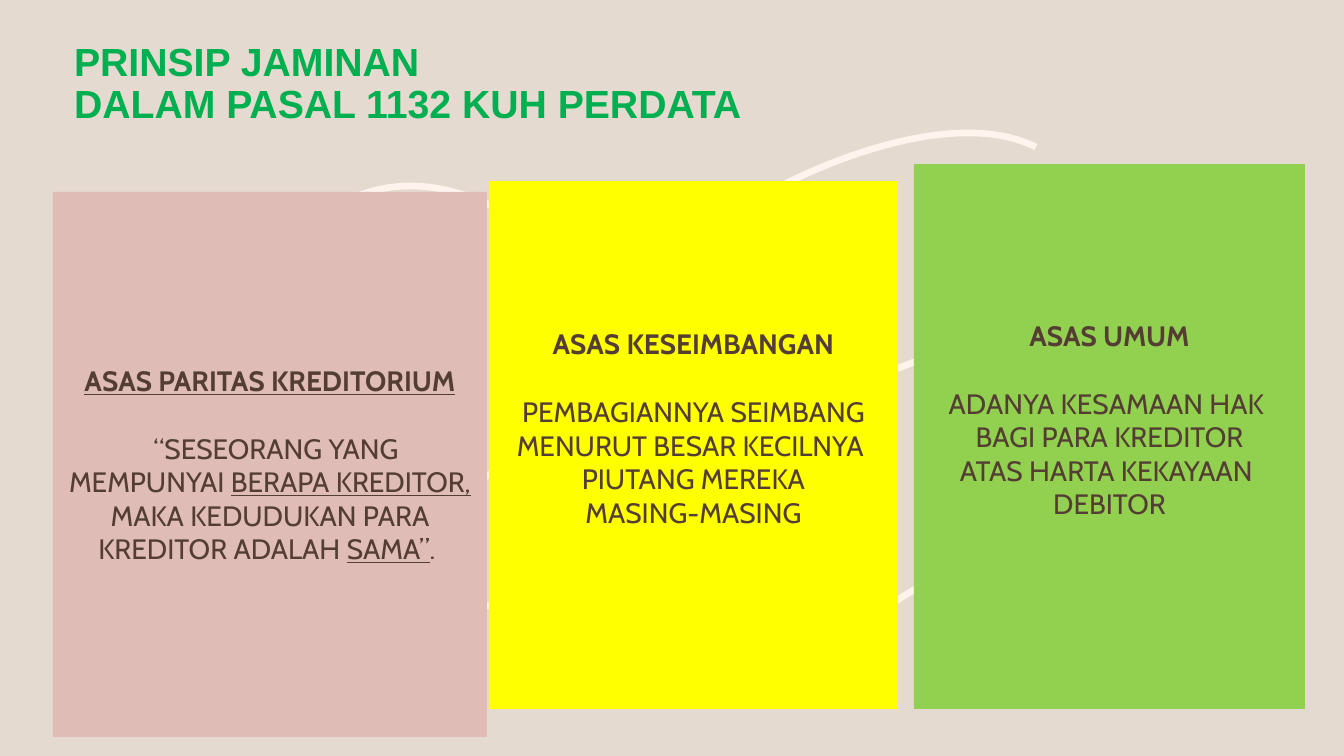
from dataclasses import dataclass

import lxml.etree
import pptx
import pptx.dml.color
import pptx.enum.shapes
import pptx.enum.text
import pptx.oxml.ns
import pptx.util

PX_PER_INCH = 100.8

Point = tuple[int, int]


@dataclass(frozen=True)
class Theme:
    background: str = "E5DACF"
    curve: str = "FEF3ED"
    title: str = "00B050"
    body: str = "543E34"
    pink: str = "DFBDB6"
    yellow: str = "FFFF00"
    green: str = "92D050"
    title_font: str = "Arial"
    body_font: str = "Cabin"
    title_size: float = 28
    body_size: float = 20
    body_line: float = 24.3
    curve_width: float = 4.75


@dataclass(frozen=True)
class Box:
    left: int
    top: int
    width: int
    height: int


@dataclass(frozen=True)
class Span:
    text: str
    underline: bool = False


@dataclass(frozen=True)
class Card:
    box: Box
    fill: str
    heading: Span
    lines: list[list[Span]]
    bottom_inset: int = 39
    indent: int = 0


THEME = Theme()
TITLE = "PRINSIP JAMINAN\vDALAM PASAL 1132 KUH PERDATA"
TITLE_BOX = Box(64, 17, 1008, 135)

CURVES: list[list[Point]] = [
    [(840, 386), (920, 366), (993, 330), (1055, 277)],
    [(589, 431), (513, 456), (449, 494), (392, 543)],
    [(310, 225), (354, 188), (402, 178), (454, 192),
     (471, 196), (486, 203), (502, 211),
     (535, 226), (571, 237), (610, 238),
     (643, 238), (676, 231), (708, 219),
     (744, 205), (764, 195), (785, 184),
     (808, 172), (949, 104), (1036, 147)],
    [(927, 584), (911, 590), (898, 600), (884, 610),
     (854, 630), (822, 646), (784, 652),
     (752, 658), (720, 656), (686, 649),
     (650, 642), (629, 634), (607, 627),
     (583, 620), (437, 575), (350, 641)],
]

CARDS = [
    Card(Box(53, 192, 434, 545), THEME.pink,
         Span("ASAS PARITAS KREDITORIUM", True),
         [[Span("“SESEORANG YANG MEMPUNYAI "),
           Span("BERAPA KREDITOR,", True),
           Span(" MAKA KEDUDUKAN PARA KREDITOR ADALAH "),
           Span("SAMA”", True),
           Span(". ")]], bottom_inset=5, indent=12),
    Card(Box(489, 181, 409, 528), THEME.yellow,
         Span("ASAS KESEIMBANGAN"),
         [[Span("PEMBAGIANNYA SEIMBANG MENURUT BESAR KECILNYA ")],
          [Span("PIUTANG MEREKA")],
          [Span("MASING-MASING")]]),
    Card(Box(914, 164, 391, 545), THEME.green,
         Span("ASAS UMUM"),
         [[Span("ADANYA KESAMAAN HAK ")],
          [Span("BAGI PARA KREDITOR")],
          [Span("ATAS HARTA KEKAYAAN ")],
          [Span("DEBITOR")]]),
]


def px(value: float) -> pptx.util.Emu:
    return pptx.util.Emu(round(value * 914400 / PX_PER_INCH))


def rgb(value: str) -> pptx.dml.color.RGBColor:
    return pptx.dml.color.RGBColor.from_string(value)


def format_run(r, font: str, size: float, color: str, bold: bool) -> None:
    r.font.name = font
    r.font.size = pptx.util.Pt(size)
    r.font.color.rgb = rgb(color)
    r.font.bold = bold


def bend_segments(sp) -> None:
    qn = pptx.oxml.ns.qn
    segments = list(sp.element.iter(qn("a:lnTo")))
    for i in range(0, len(segments), 3):
        outline = segments[i].getparent()
        bezier = lxml.etree.SubElement(outline, qn("a:cubicBezTo"))
        for segment in segments[i:i + 3]:
            bezier.append(segment[0])
            outline.remove(segment)


def draw_curve(s, points: list[Point]) -> None:
    start, *rest = [(px(x), px(y)) for x, y in points]
    builder = s.shapes.build_freeform(*start)
    builder.add_line_segments(rest, close=False)
    sp = builder.convert_to_shape()
    bend_segments(sp)
    sp.shadow.inherit = False
    sp.fill.background()
    sp.line.color.rgb = rgb(THEME.curve)
    sp.line.width = pptx.util.Pt(THEME.curve_width)


def draw_title(s) -> None:
    sp = s.shapes.title
    sp.left, sp.top = px(TITLE_BOX.left), px(TITLE_BOX.top)
    sp.width, sp.height = px(TITLE_BOX.width), px(TITLE_BOX.height)
    tf = sp.text_frame
    tf.text = TITLE
    tf.word_wrap = True
    tf.auto_size = pptx.enum.text.MSO_AUTO_SIZE.NONE
    tf.vertical_anchor = pptx.enum.text.MSO_ANCHOR.MIDDLE
    p = tf.paragraphs[0]
    p.alignment = pptx.enum.text.PP_ALIGN.LEFT
    p.line_spacing = 0.9
    for r in p.runs:
        format_run(r, THEME.title_font, THEME.title_size, THEME.title, True)


def draw_card(s, card: Card) -> None:
    box = card.box
    sp = s.shapes.add_shape(pptx.enum.shapes.MSO_SHAPE.RECTANGLE, px(box.left),
                            px(box.top), px(box.width), px(box.height))
    sp.shadow.inherit = False
    sp.fill.solid()
    sp.fill.fore_color.rgb = rgb(card.fill)
    sp.line.fill.background()
    tf = sp.text_frame
    tf.word_wrap = True
    tf.vertical_anchor = pptx.enum.text.MSO_ANCHOR.MIDDLE
    tf.margin_bottom = px(card.bottom_inset)
    for i, spans in enumerate([[card.heading], *card.lines]):
        p = tf.paragraphs[0] if i == 0 else tf.add_paragraph()
        p.alignment = pptx.enum.text.PP_ALIGN.CENTER
        p.space_after = pptx.util.Pt(THEME.body_line if i == 0 else 0)
        if i > 0 and card.indent:
            p._p.get_or_add_pPr().set("indent", str(px(card.indent)))
        for span in spans:
            r = p.add_run()
            r.text = span.text
            format_run(r, THEME.body_font, THEME.body_size, THEME.body, i == 0)
            r.font.underline = span.underline


def main() -> None:
    prs = pptx.Presentation()
    prs.slide_width, prs.slide_height = px(1344), px(756)
    s = prs.slides.add_slide(prs.slide_layouts[5])
    s.background.fill.solid()
    s.background.fill.fore_color.rgb = rgb(THEME.background)
    for points in CURVES:
        draw_curve(s, points)
    draw_title(s)
    for card in CARDS:
        draw_card(s, card)
    prs.save("out.pptx")


if __name__ == "__main__":
    main()
